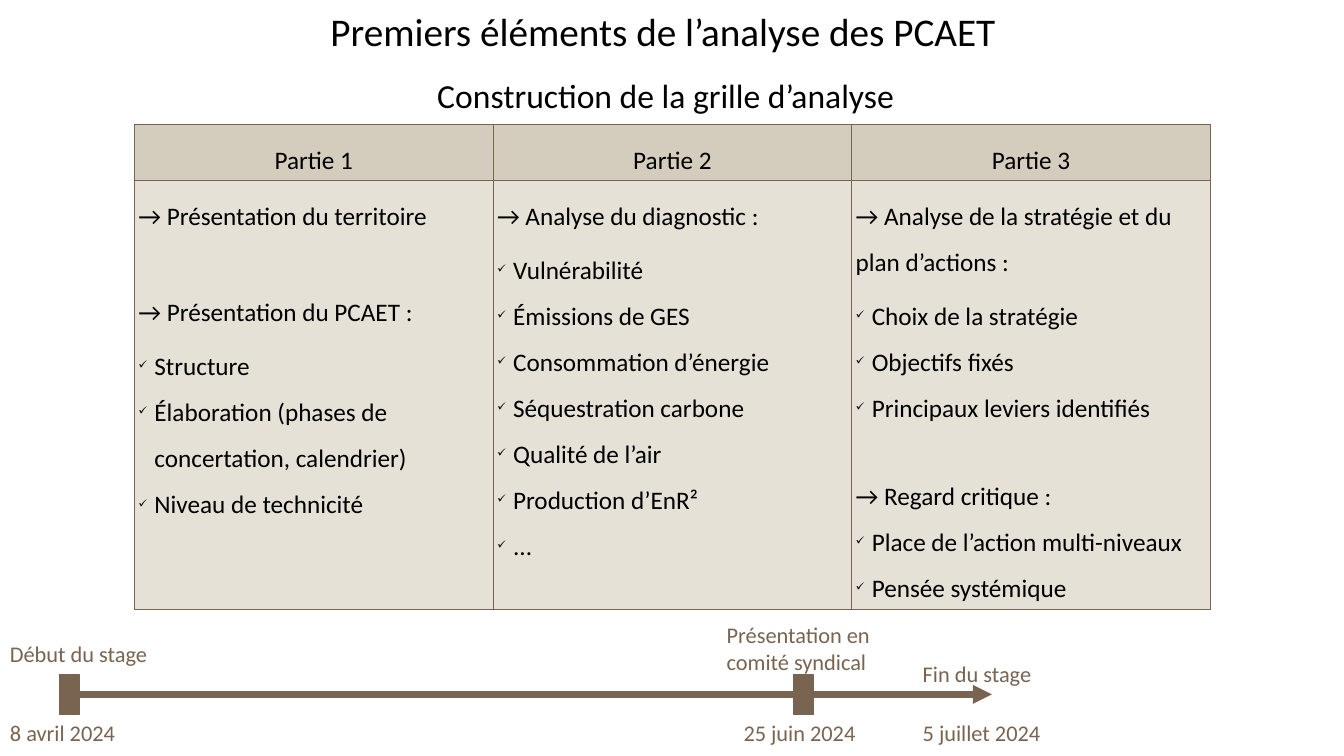
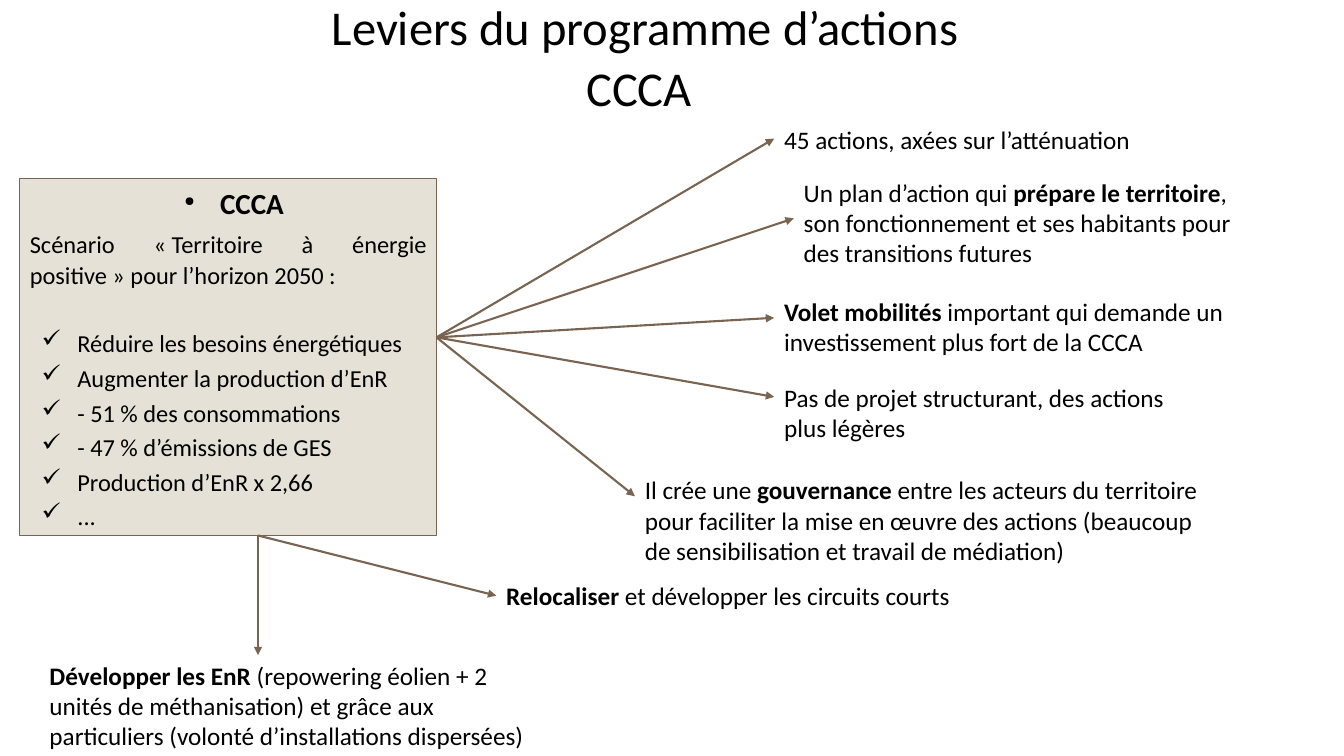
import pptx
import pptx.dml.color
import pptx.enum.shapes
import pptx.enum.text
import pptx.oxml.ns
import pptx.util
from lxml import etree

Pt = pptx.util.Pt
ALIGN = pptx.enum.text.PP_ALIGN
qn = pptx.oxml.ns.qn

FONT = "Calibri"
BLACK, BROWN, SAND, BEIGE = "000000", "796451", "D4CCBC", "E6E1D7"


def rgb(value):
    return pptx.dml.color.RGBColor.from_string(value)


def add_bullet(p, char, percent, margin, hanging):
    pPr = p._p.get_or_add_pPr()
    pPr.set("marL", str(Pt(margin)))
    pPr.set("indent", str(-Pt(hanging)))
    color = etree.SubElement(pPr, qn("a:buClr"))
    etree.SubElement(color, qn("a:srgbClr")).set("val", BLACK)
    etree.SubElement(pPr, qn("a:buSzPct")).set("val", str(percent * 1000))
    etree.SubElement(pPr, qn("a:buChar")).set("char", char)


def write(tf, index, text, size=18, color=BLACK, align=ALIGN.LEFT, spacing=1.0,
          before=0, after=0, bullet=None, margin=0):
    """Fill paragraph number index; text between ** marks is bold."""
    p = tf.paragraphs[0] if index == 0 else tf.add_paragraph()
    p.alignment = align
    p.line_spacing = spacing
    p.space_before, p.space_after = Pt(before), Pt(after)
    if bullet:
        add_bullet(p, *bullet)
    elif margin:
        p._p.get_or_add_pPr().set("marL", str(Pt(margin)))
    for i, part in enumerate(text.split("**")):
        if part:
            r = p.add_run()
            r.text = part
            r.font.name, r.font.size = FONT, Pt(size)
            r.font.bold = i % 2 == 1
            r.font.color.rgb = rgb(color)


def add_text(slide, x, y, w, h, *paragraphs, **style):
    """Each paragraph is a text, or a pair of text and its own style."""
    tf = slide.shapes.add_textbox(Pt(x), Pt(y), Pt(w), Pt(h)).text_frame
    tf.word_wrap = True
    for i, item in enumerate(paragraphs):
        text, own = (item, {}) if isinstance(item, str) else item
        write(tf, i, text, **{**style, **own})


def add_title(slide, y, *paragraphs, **style):
    add_text(slide, 42.5, y, 828, 80, *paragraphs, align=ALIGN.CENTER, **style)


def add_rect(slide, x, y, w, h, fill):
    sp = slide.shapes.add_shape(pptx.enum.shapes.MSO_SHAPE.RECTANGLE,
                                Pt(x), Pt(y), Pt(w), Pt(h))
    sp.shadow.inherit = False
    sp.fill.solid()
    sp.fill.fore_color.rgb = rgb(fill)
    sp.line.color.rgb = rgb(BROWN)
    sp.line.width = Pt(0)
    return sp


def add_arrow(slide, start, end, width):
    line = slide.shapes.add_connector(pptx.enum.shapes.MSO_CONNECTOR.STRAIGHT,
                                      *map(Pt, start + end))
    line.line.color.rgb = rgb(BROWN)
    line.line.width = Pt(width)
    etree.SubElement(line.line._get_or_add_ln(), qn("a:tailEnd")).set("type", "triangle")
    etree.SubElement(line._element.spPr, qn("a:effectLst"))


def format_cell(cell, fill):
    cell.margin_left = cell.margin_right = Pt(2.83)
    cell.margin_top = cell.margin_bottom = Pt(3.6)
    tcPr = cell._tc.get_or_add_tcPr()
    for side in ("lnL", "lnR", "lnT", "lnB"):
        ln = etree.SubElement(tcPr, qn("a:" + side))
        ln.set("w", str(Pt(0.57)))
        color = etree.SubElement(etree.SubElement(ln, qn("a:solidFill")), qn("a:srgbClr"))
        color.set("val", BROWN)
    cell.fill.solid()
    cell.fill.fore_color.rgb = rgb(fill)


def add_grid(slide, columns):
    """Columns of (heading, items); an item with a gap starts a section."""
    table = slide.shapes.add_table(2, len(columns), Pt(96), Pt(89),
                                   Pt(768.6), Pt(346)).table
    table.horz_banding = False
    table.rows[0].height, table.rows[1].height = Pt(40), Pt(306)
    for c, (heading, items) in enumerate(columns):
        table.columns[c].width = Pt(256.2)
        head, body = table.cell(0, c), table.cell(1, c)
        format_cell(head, SAND)
        format_cell(body, BEIGE)
        write(head.text_frame, 0, heading, align=ALIGN.CENTER, spacing=1.5)
        for i, item in enumerate(items):
            if isinstance(item, str):
                style = {"bullet": ("✓", 45, 11.5, 11.5)}
            else:
                item, before, after = item
                style = {"before": before, "after": after}
            write(body.text_frame, i, item, spacing=1.5, **style)


def add_timeline(slide):
    add_arrow(slide, (57, 496), (708.5, 496), 4.5)
    labels = [
        ("8 avril 2024", 0, 510.5, 99),
        ("5 juillet 2024", 652, 510.5, 99),
        ("Début du stage", 0, 453.5, 113),
        ("Fin du stage", 652, 468, 99),
        ("25 juin 2024", 524, 510.5, 99),
        ("Présentation en comité syndical", 512, 440, 125),
    ]
    for text, x, y, w in labels:
        add_text(slide, x, y, w, 28, text, size=16, color=BROWN)
    for x in (42.5, 567):
        add_rect(slide, x, 482, 14.2, 28.3, BROWN)


def build_grid_slide(slide):
    add_title(slide, 5.8, "Premiers éléments de l’analyse des PCAET",
              ("Construction de la grille d’analyse", {"size": 24, "before": 17.5, "margin": 38}),
              size=28, spacing=0.9, margin=34)
    add_grid(slide, [
        ("Partie 1", [
            ("→ Présentation du territoire", 0, 0),
            ("→ Présentation du PCAET\u00a0:", 36, 5.7),
            "Structure",
            "Élaboration (phases de concertation, calendrier)",
            "Niveau de technicité",
        ]),
        ("Partie 2", [
            ("→ Analyse du diagnostic\u00a0:", 0, 5.7),
            "Vulnérabilité",
            "Émissions de GES",
            "Consommation d’énergie",
            "Séquestration carbone",
            "Qualité de l’air",
            "Production d’EnR²",
            "...",
        ]),
        ("Partie 3", [
            ("→ Analyse de la stratégie et du plan d’actions\u00a0:", 0, 5.7),
            "Choix de la stratégie",
            "Objectifs fixés",
            "Principaux leviers identifiés",
            ("→ Regard critique :", 30, 0),
            "Place de l’action multi-niveaux",
            "Pensée systémique",
        ]),
    ])
    add_timeline(slide)


def add_scenario(slide):
    tf = add_rect(slide, 14.2, 127.5, 297.6, 255, BEIGE).text_frame
    tf.word_wrap = True
    tf.vertical_anchor = pptx.enum.text.MSO_ANCHOR.TOP
    write(tf, 0, "**CCCA**", size=20.8, align=ALIGN.CENTER, spacing=1.05, after=5.7,
          bullet=("●", 45, 34, 25.5))
    body = {"size": 17.4, "align": ALIGN.JUSTIFY, "spacing": 1.05, "after": 2.8}
    write(tf, 1, "Scénario «\u00a0Territoire à énergie positive\u00a0» pour l’horizon 2050 :", **body)
    goals = ["Réduire les besoins énergétiques", "Augmenter la production d’EnR",
             "- 51\u00a0% des consommations", "- 47\u00a0% d’émissions de GES",
             "Production d’EnR x 2,66", "..."]
    for i, goal in enumerate(goals):
        write(tf, i + 2, goal, before=0 if i else 24, bullet=("✓", 100, 34, 25.5), **body)


def build_levers_slide(slide):
    add_title(slide, 6, ("Leviers du programme d’actions", {"margin": 8.5}),
              ("CCCA", {"before": 14.2}), size=34.7, spacing=0.7)
    add_scenario(slide)
    right, bottom = (311.8, 241), (184.3, 382.5)
    # arrow start, arrow tip, text left, top and width, text
    levers = [
        (right, (553, 99), 553, 85, 298, "45 actions, axées sur l’atténuation"),
        (right, (567, 156), 567, 123, 340,
         "Un plan d’action qui **prépare le territoire**, son fonctionnement "
         "et ses habitants pour des transitions futures"),
        (right, (553, 227), 553, 208, 340,
         "**Volet mobilités** important qui demande un investissement plus fort de la CCCA"),
        (right, (553, 283.5), 553, 269.5, 298,
         "Pas de projet structurant, des actions plus légères"),
        (right, (453.5, 354.5), 453.5, 335.5, 411,
         "Il crée une **gouvernance** entre les acteurs du territoire pour faciliter la mise "
         "en œuvre des actions (beaucoup de sensibilisation et travail de médiation)"),
        (bottom, (354.5, 425.5), 354.5, 411, 340,
         "**Relocaliser** et développer les circuits courts"),
        (bottom, (184.3, 468), 28.3, 468, 354,
         "**Développer les EnR** (repowering éolien + 2 unités de méthanisation) et grâce "
         "aux particuliers (volonté d’installations dispersées)"),
    ]
    for start, tip, x, y, w, text in levers:
        add_arrow(slide, start, tip, 1.5)
        add_text(slide, x, y, w, 60, text)


def main():
    prs = pptx.Presentation()
    prs.slide_width, prs.slide_height = Pt(960), Pt(540)
    for build in (build_grid_slide, build_levers_slide):
        build(prs.slides.add_slide(prs.slide_layouts[6]))
    prs.save("out.pptx")


if __name__ == "__main__":
    main()
